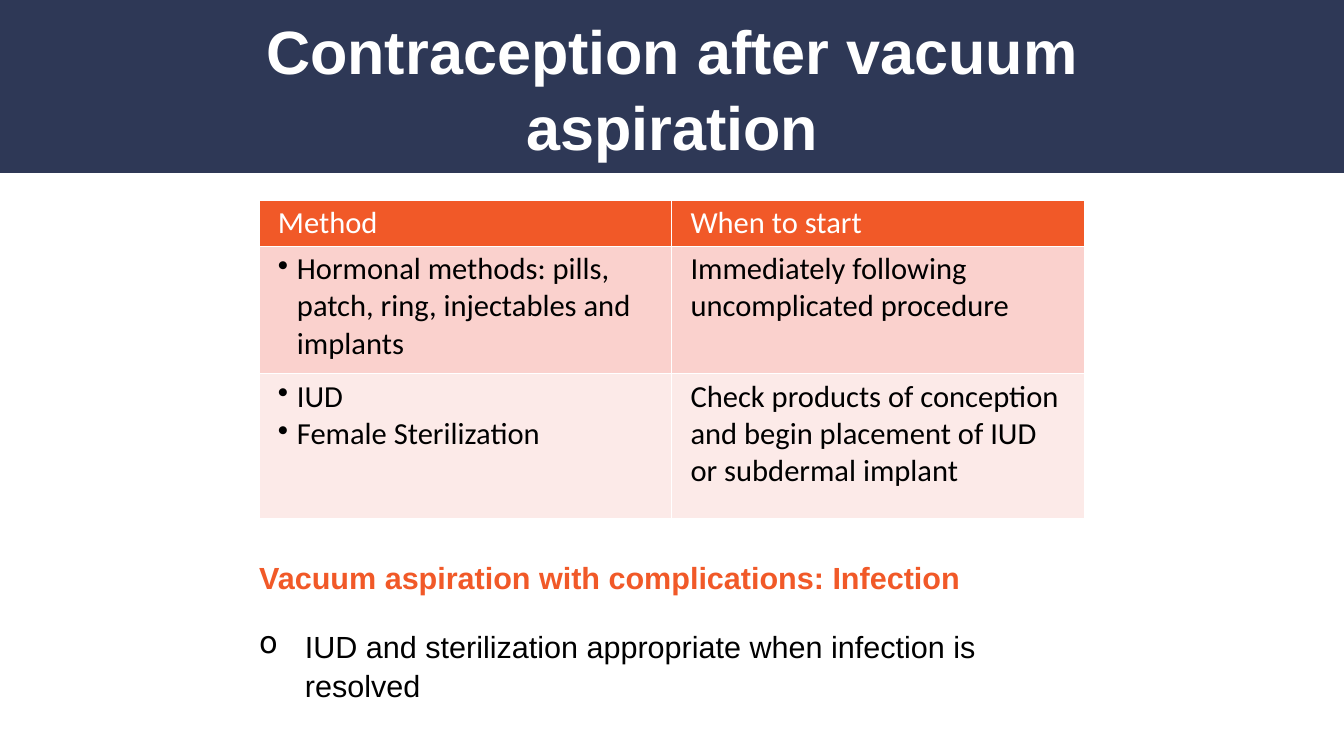
from dataclasses import dataclass

from lxml import etree
from pptx import Presentation
from pptx import util as u
from pptx.dml.color import RGBColor
from pptx.enum import shapes, text
from pptx.oxml import ns


@dataclass(frozen=True)
class Theme:
    navy: str = "2E3856"
    orange: str = "F15928"
    rose: str = "FAD1CD"
    blush: str = "FCEAE8"
    white: str = "FFFFFF"
    black: str = "000000"
    head: str = "Arial"
    body: str = "Calibri"
    large: int = 72
    small: int = 36


@dataclass(frozen=True)
class Style:
    font: str
    size: int
    color: str
    bold: bool = False
    lead: float = 1.0
    after: int = 0


@dataclass(frozen=True)
class Para:
    text: str
    style: Style
    bullet: str = ""
    indent: float = 0.0


@dataclass(frozen=True)
class Row:
    height: float
    fill: str
    cells: tuple[tuple[Para, ...], ...]


@dataclass(frozen=True)
class Box:
    left: float
    top: float
    width: float
    height: float

    def lengths(self) -> tuple[u.Cm, ...]:
        return tuple(u.Cm(n) for n in (self.left, self.top, self.width, self.height))


T = Theme()
TITLE = Style(T.head, T.large, T.white, True, 1.04)
LEAD = Style(T.head, T.small, T.orange, True, 1.05, 36)
NOTE = Style(T.head, T.small, T.black, False, 1.05, 36)
LABEL = Style(T.body, T.small, T.white)
CELL = Style(T.body, T.small, T.black)

WIDE, HIGH = 55.85, 31.42
BAND = Box(0, 0, WIDE, 7.19)
HEADING = Box(4.65, 0.51, 46.56, 6.15)
GRID = Box(10.77, 8.31, 34.29, 13.23)
NOTES = Box(10.77, 23.16, 34.29, 5.89)


def item(words: str) -> Para:
    return Para(words, CELL, "•", 0.79)


ROWS = (
    Row(1.91, T.orange, (
        (Para("Method", LABEL),),
        (Para("When to start", LABEL),),
    )),
    Row(5.3, T.rose, (
        (item("Hormonal methods: pills, patch, ring, injectables and implants"),),
        (Para("Immediately following uncomplicated procedure", CELL),),
    )),
    Row(6.02, T.blush, (
        (item("IUD"), item("Female Sterilization")),
        (Para("Check products of conception and begin placement of IUD "
              "or subdermal implant", CELL),),
    )),
)


def rgb(code: str) -> RGBColor:
    return RGBColor.from_string(code)


def write(frame, paras: tuple[Para, ...], side: float = 0, edge: float = 0,
          align=text.PP_ALIGN.LEFT) -> None:
    frame.word_wrap = True
    frame.margin_left = frame.margin_right = u.Cm(side)
    frame.margin_top = frame.margin_bottom = u.Cm(edge)
    for i, para in enumerate(paras):
        p = frame.add_paragraph() if i else frame.paragraphs[0]
        p.alignment = align
        p.line_spacing = para.style.lead
        p.space_after = u.Pt(para.style.after)
        if para.bullet:
            props = p._p.get_or_add_pPr()
            inset = u.Cm(para.indent)
            props.set("marL", str(inset))
            props.set("indent", str(-inset))
            etree.SubElement(props, ns.qn("a:buChar"), char=para.bullet)
        run = p.add_run()
        run.text = para.text
        font = run.font
        font.name = para.style.font
        font.size = u.Pt(para.style.size)
        font.bold = para.style.bold
        font.color.rgb = rgb(para.style.color)


def border(cell, color: str) -> None:
    props = cell._tc.get_or_add_tcPr()
    for i, side in enumerate(("lnL", "lnR", "lnT", "lnB")):
        line = etree.Element(ns.qn(f"a:{side}"), w=str(u.Pt(1)))
        fill = etree.SubElement(line, ns.qn("a:solidFill"))
        etree.SubElement(fill, ns.qn("a:srgbClr"), val=color)
        props.insert(i, line)


def add_title(slide) -> None:
    title = slide.shapes.title
    title.left, title.top, title.width, title.height = HEADING.lengths()
    frame = title.text_frame
    frame.auto_size = text.MSO_AUTO_SIZE.NONE
    frame.vertical_anchor = text.MSO_ANCHOR.MIDDLE
    write(frame, (Para("Contraception after vacuum aspiration", TITLE),),
          align=text.PP_ALIGN.CENTER)
    band = slide.shapes.add_shape(shapes.MSO_SHAPE.RECTANGLE, *BAND.lengths())
    band.shadow.inherit = False
    band.fill.solid()
    band.fill.fore_color.rgb = rgb(T.navy)
    band.line.fill.background()
    title.element.addprevious(band.element)


def add_grid(slide) -> None:
    count = len(ROWS[0].cells)
    table = slide.shapes.add_table(len(ROWS), count, *GRID.lengths()).table
    for col in table.columns:
        col.width = u.Cm(GRID.width / count)
    for r, row in enumerate(ROWS):
        table.rows[r].height = u.Cm(row.height)
        for c, paras in enumerate(row.cells):
            cell = table.cell(r, c)
            cell.fill.solid()
            cell.fill.fore_color.rgb = rgb(row.fill)
            border(cell, T.white)
            write(cell.text_frame, paras)
            cell.margin_left = cell.margin_right = u.Cm(0.78)
            cell.margin_top = cell.margin_bottom = u.Cm(0.18)


def add_notes(slide) -> None:
    box = slide.shapes.add_textbox(*NOTES.lengths())
    write(box.text_frame, (
        Para("Vacuum aspiration with complications: Infection", LEAD),
        Para("IUD and sterilization appropriate when infection is resolved",
             NOTE, "o", 1.9),
    ))


def main() -> None:
    deck = Presentation()
    deck.slide_width, deck.slide_height = u.Cm(WIDE), u.Cm(HIGH)
    slide = deck.slides.add_slide(deck.slide_layouts[5])
    add_title(slide)
    add_grid(slide)
    add_notes(slide)
    deck.save("out.pptx")


if __name__ == "__main__":
    main()
